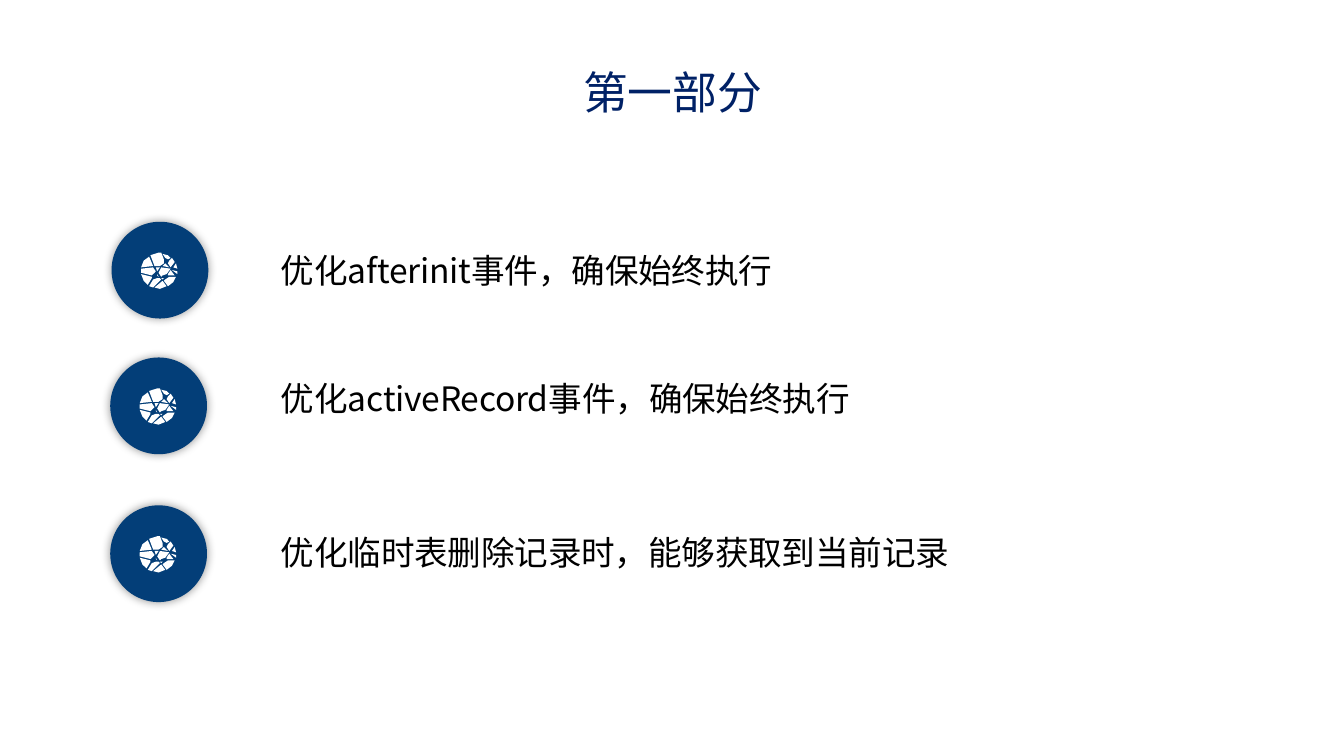
from lxml.etree import SubElement as Sub
from pptx import Presentation
from pptx.dml.color import RGBColor as RGB
from pptx.enum.shapes import MSO_SHAPE as Kind
from pptx.enum.text import MSO_ANCHOR as Anchor, MSO_AUTO_SIZE as Fit, PP_ALIGN as Align
from pptx.oxml.ns import qn
from pptx.util import Inches, Pt

FONT = "Noto Sans CJK SC"
COLORS = {"title": "002166", "disc": "033E78", "globe": "FFFFFF", "text": "000000"}
DISC = 0.72
GLOBE = [
    [(16, 21), (19, 25), (14, 27), (10, 26)],
    [(15, 19), (17, 19), (16, 20)],
    [(12, 19), (14, 19), (15, 20), (9, 26), (6, 25), (9, 20)],
    [(26, 18), (24, 22), (20, 25), (17, 21), (18, 20), (21, 18)],
    [(0, 16), (8, 18), (8, 19), (5, 24), (2, 21)],
    [(12, 16), (13, 18), (12, 17)],
    [(22, 13), (25, 17), (20, 17), (20, 16)],
    [(23, 13), (27, 14), (27, 16)],
    [(9, 11), (11, 14), (10, 15), (8, 17), (0, 15), (0, 12)],
    [(15, 11), (22, 12), (19, 16), (16, 17), (15, 18), (13, 15)],
    [(14, 11), (12, 14), (11, 11)],
    [(18, 8), (19, 9), (21, 11), (16, 10)],
    [(26, 8), (27, 12), (24, 11)],
    [(23, 4), (25, 7), (22, 11), (20, 8), (21, 6)],
    [(6, 3), (9, 10), (0, 11), (2, 6)],
    [(16, 1), (20, 2), (22, 4), (20, 5), (18, 4)],
    [(13, 0), (15, 0), (17, 5), (17, 8), (14, 10), (10, 10), (7, 2)],
]
ROWS = [
    (0.83, 1.65, 1.86, 6.69, "优化afterinit事件，确保始终执行"),
    (0.82, 2.66, 2.81, 6.3, "优化activeRecord事件，确保始终执行"),
    (0.82, 3.76, 3.96, 6.3, "优化临时表删除记录时，能够获取到当前记录"),
]


def paint(shape, color):
    """Give a shape a flat fill with no line or shadow."""
    shape.fill.solid()
    shape.fill.fore_color.rgb = RGB.from_string(COLORS[color])
    shape.line.fill.background()
    shape.shadow.inherit = False


def glow(shape):
    """Add a soft dark shadow all around a shape."""
    effects = shape._element.spPr.find(qn("a:effectLst"))
    shade = Sub(effects, qn("a:outerShdw"), blurRad=str(Pt(5)), dist="0", dir="0", algn="ctr")
    black = Sub(shade, qn("a:srgbClr"), val="000000")
    Sub(black, qn("a:alpha"), val="40000")


def write(shape, text, size, color, align, pads=(0, 0)):
    """Put one styled line of text into a shape."""
    frame = shape.text_frame
    frame.text = text
    frame.word_wrap = True
    frame.auto_size = Fit.NONE
    frame.vertical_anchor = Anchor.MIDDLE
    frame.margin_left = frame.margin_right = Inches(pads[0])
    frame.margin_top = frame.margin_bottom = Inches(pads[1])
    line = frame.paragraphs[0]
    line.alignment = align
    run = line.runs[0]
    run.font.size = Pt(size)
    run.font.name = FONT
    run.font.color.rgb = RGB.from_string(COLORS[color])
    Sub(run.font._element, qn("a:ea"), typeface=FONT)
    return run


def add_title(slide, text):
    """Place the centred slide title."""
    title = slide.shapes.title
    title.left, title.top = Inches(3.67), Inches(0.45)
    title.width, title.height = Inches(2.67), Inches(0.46)
    write(title, text, 24, "title", Align.CENTER, (0.06, 0.03))


def add_icon(slide, left, top):
    """Draw a globe on a round disc as one group."""
    group = slide.shapes.add_group_shape().shapes
    disc = group.add_shape(Kind.OVAL, Inches(left), Inches(top), Inches(DISC), Inches(DISC))
    paint(disc, "disc")
    glow(disc)
    pen = group.build_freeform(*GLOBE[0][0], scale=Inches(0.01))
    for index, patch in enumerate(GLOBE):
        if index:
            pen.move_to(*patch[0])
        pen.add_line_segments(patch[1:], close=True)
    globe = pen.convert_to_shape(Inches(left + 0.22), Inches(top + 0.23))
    paint(globe, "globe")


def add_label(slide, top, width, text):
    """Add the line of text beside an icon."""
    box = slide.shapes.add_textbox(Inches(2.09), Inches(top), Inches(width), Inches(0.3))
    run = write(box, text, 18, "text", Align.LEFT)
    run.font._element.set("spc", "-10")


def main():
    """Build and save the slide."""
    deck = Presentation()
    deck.slide_width = Inches(10)
    deck.slide_height = deck.slide_width * 9 // 16
    slide = deck.slides.add_slide(deck.slide_layouts[5])
    add_title(slide, "第一部分")
    for left, top, base, width, text in ROWS:
        add_icon(slide, left, top)
        add_label(slide, base, width, text)
    deck.save("out.pptx")


if __name__ == "__main__":
    main()
